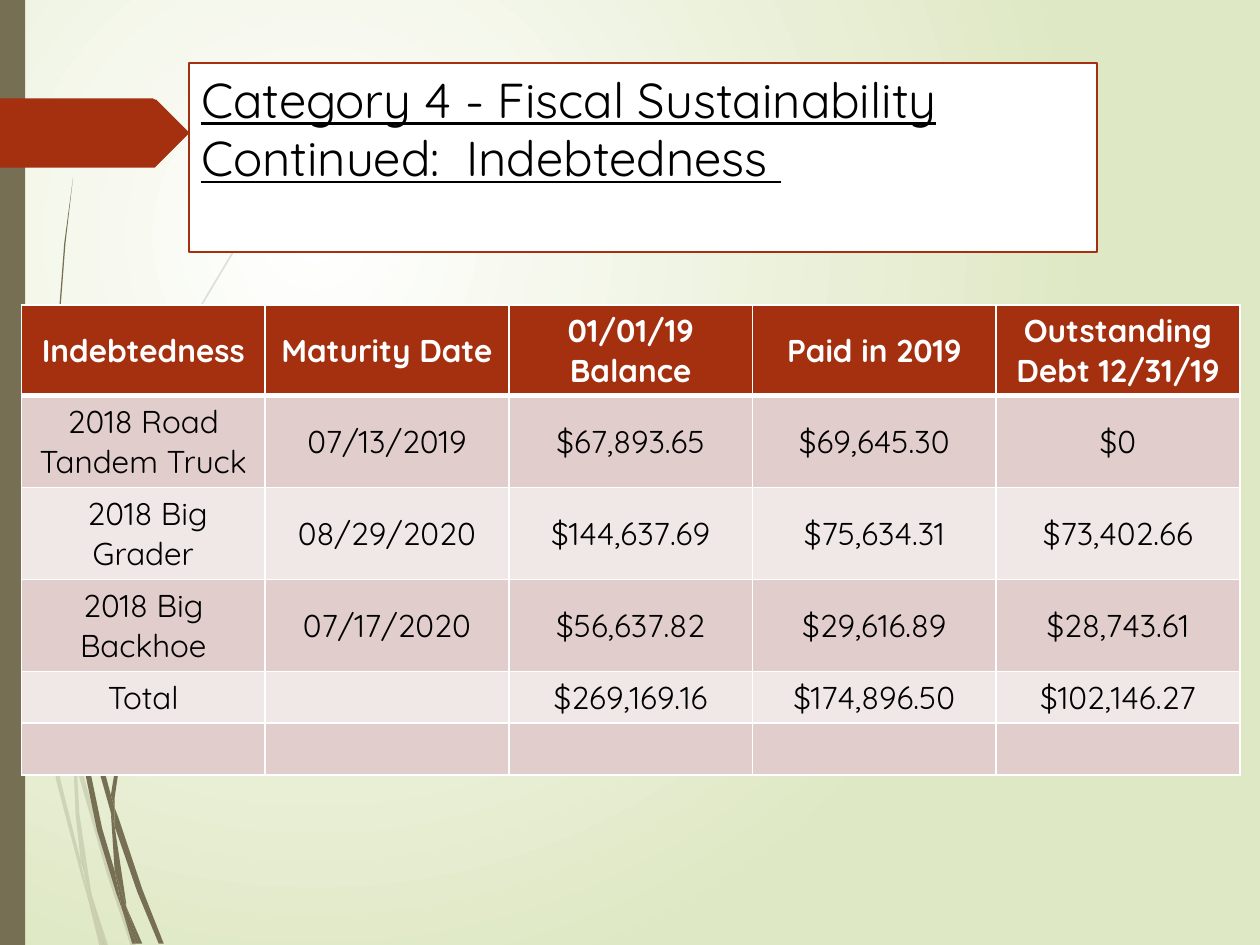
from dataclasses import dataclass

from lxml import etree
from pptx import Presentation
from pptx.dml.color import RGBColor
from pptx.enum.shapes import MSO_SHAPE
from pptx.enum.text import MSO_ANCHOR, PP_ALIGN
from pptx.oxml.ns import qn
from pptx.util import Pt

RECT = MSO_SHAPE.RECTANGLE
TOP, MIDDLE = MSO_ANCHOR.TOP, MSO_ANCHOR.MIDDLE
CENTER = PP_ALIGN.CENTER
PX = 9144  # EMU in one px, 100 px to the inch


@dataclass(frozen=True)
class Theme:
    font: str = "Quicksand"
    title_size: int = 28
    table_size: int = 18
    ink: str = "000000"
    white: str = "FFFFFF"
    accent: str = "A53010"
    stem: str = "766F54"
    meadow: str = "DFE8C4"
    band_dark: str = "E1CDCC"
    band_light: str = "F0E8E7"


T = Theme()

TITLE = "Category 4 - Fiscal Sustainability Continued:  Indebtedness "
ROWS = [
    ["Indebtedness", "Maturity Date", "01/01/19 Balance", "Paid in 2019", "Outstanding Debt 12/31/19"],
    ["2018 Road Tandem Truck", "07/13/2019", "$67,893.65", "$69,645.30", "$0"],
    [" 2018 Big Grader", "08/29/2020", "$144,637.69", "$75,634.31", "$73,402.66"],
    ["2018 Big Backhoe", "07/17/2020", "$56,637.82", "$29,616.89", "$28,743.61"],
    ["Total", "", "$269,169.16", "$174,896.50", "$102,146.27"],
    ["", "", "", "", ""],
]
ROW_HEIGHTS = [72, 73, 73, 73, 41, 41]

# Outlines of the grass blades, in px
PALE_BLADES = [
    [(8, 350), (6, 322), (0, 282), (0, 299), (7, 344)],
    [(40, 522), (59, 599), (59, 586), (43, 520), (10, 345), (12, 376)],
    [(64, 607), (61, 596), (61, 610), (85, 694), (104, 751), (108, 751), (88, 692)],
    [(83, 751), (86, 751), (73, 711)],
    [(64, 683), (48, 619), (22, 469), (12, 376), (8, 350), (19, 470), (45, 621),
     (64, 693), (70, 714), (69, 707)],
    [(58, 599), (60, 646), (64, 683), (67, 692), (73, 711), (72, 706), (63, 646),
     (61, 610), (61, 608)],
    [(61, 584), (76, 462), (111, 349), (159, 245), (187, 198), (201, 175), (217, 154),
     (217, 153), (201, 175), (186, 197), (158, 244), (110, 348), (75, 461), (59, 584),
     (59, 586), (61, 596)],
    [(70, 714), (79, 751), (82, 751)],
    [(61, 608), (61, 610), (61, 596), (59, 586), (58, 599)],
    [(67, 692), (65, 683), (69, 707), (70, 714), (82, 751), (83, 751), (73, 711)],
]
DARK_BLADES = [
    [(5, 110), (14, 233), (27, 355), (46, 477), (47, 481), (45, 457), (45, 453),
     (30, 355), (15, 232), (6, 109), (4, 48), (3, 0), (2, 0), (3, 48)],
    [(73, 592), (88, 645), (88, 633), (88, 631), (77, 590), (50, 472), (53, 505)],
    [(94, 649), (91, 641), (91, 656), (109, 708), (126, 749), (130, 749), (113, 706)],
    [(91, 691), (81, 657), (60, 556), (53, 505), (47, 477), (56, 557), (77, 659),
     (92, 708), (97, 722), (96, 717)],
    [(50, 472), (48, 453), (44, 349), (48, 245), (52, 193), (58, 141), (58, 141),
     (51, 193), (47, 245), (43, 349), (45, 449), (49, 472)],
    [(110, 749), (113, 749), (100, 719)],
    [(47, 477), (53, 505), (50, 472), (49, 472), (45, 449), (45, 453)],
    [(91, 633), (103, 552), (131, 476), (169, 406), (191, 374), (203, 359), (216, 344),
     (215, 344), (203, 358), (191, 373), (168, 405), (129, 474), (101, 551), (88, 631),
     (91, 641)],
    [(97, 722), (105, 749), (108, 749)],
    [(88, 645), (91, 691), (96, 706), (100, 719), (100, 716), (91, 656), (90, 651)],
    [(88, 645), (90, 651), (91, 656), (91, 641), (88, 631), (88, 633)],
    [(96, 706), (91, 691), (96, 717), (97, 722), (108, 749), (110, 749), (100, 719)],
]
ARROW_TAB = [(149, 107), (124, 132), (123, 133), (121, 133), (0, 133), (0, 78),
             (121, 78), (123, 79), (124, 79), (149, 104), (150, 105)]


def px(*lengths):
    return [n * PX for n in lengths]


def rgb(color):
    return RGBColor.from_string(color)


def paint(sp, color, alpha=None):
    """Flat fill with no outline and no shadow."""
    sp.shadow.inherit = False
    sp.line.fill.background()
    sp.fill.solid()
    sp.fill.fore_color.rgb = rgb(color)
    if alpha:
        clr = sp._element.spPr.find(qn("a:solidFill"))[0]
        etree.SubElement(clr, qn("a:alpha"), val=str(alpha * 1000))


def add_outline(s, points, color, alpha=None):
    builder = s.shapes.build_freeform(*points[0], scale=PX)
    builder.add_line_segments(points[1:], close=True)
    paint(builder.convert_to_shape(), color, alpha)


def add_run(p, text, size, color, bold=False, underline=False):
    r = p.add_run()
    r.text = text
    f = r.font
    f.name, f.size, f.bold, f.underline = T.font, Pt(size), bold, underline
    f.color.rgb = rgb(color)


def set_background(s):
    """Round glow a quarter of the way in from the top left."""
    fill = s.background.fill
    fill.gradient()
    for stop, color in zip(fill.gradient_stops, (T.white, T.meadow)):
        stop.color.rgb = rgb(color)
    grad = s._element.find(".//" + qn("a:gradFill"))
    grad.remove(grad.find(qn("a:lin")))
    glow = etree.SubElement(grad, qn("a:path"), path="circle")
    etree.SubElement(glow, qn("a:fillToRect"), l="50000", t="50000", r="100000", b="100000")


def add_title(s):
    sp = s.shapes.add_textbox(*px(150, 50, 721, 150))
    sp.fill.solid()
    sp.fill.fore_color.rgb = rgb(T.white)
    sp.line.color.rgb = rgb(T.accent)
    sp.line.width = Pt(1.25)
    tf = sp.text_frame
    tf.word_wrap = True
    tf.vertical_anchor = TOP
    add_run(tf.paragraphs[0], TITLE, T.title_size, T.ink, underline=True)


def set_border(cell, side, width):
    ln = etree.SubElement(cell._tc.get_or_add_tcPr(), qn("a:ln" + side), w=str(Pt(width)))
    fill = etree.SubElement(ln, qn("a:solidFill"))
    etree.SubElement(fill, qn("a:srgbClr"), val=T.white)


def fill_cell(cell, text, row):
    heading = row == 0
    thick_side = {0: "B", 1: "T"}.get(row)  # heavy rule under the heading
    for side in "LRTB":
        set_border(cell, side, 3 if side == thick_side else 1)
    cell.fill.solid()
    band = T.band_dark if row % 2 else T.band_light
    cell.fill.fore_color.rgb = rgb(T.accent if heading else band)
    cell.vertical_anchor = MIDDLE
    p = cell.text_frame.paragraphs[0]
    p.alignment = CENTER
    if text:
        add_run(p, text, T.table_size, T.white if heading else T.ink, bold=heading)


def add_debt_table(s):
    columns = len(ROWS[0])
    frame = s.shapes.add_table(len(ROWS), columns, *px(17, 242, 967, sum(ROW_HEIGHTS)))
    table = frame.table
    for i, (values, height) in enumerate(zip(ROWS, ROW_HEIGHTS)):
        table.rows[i].height = height * PX
        for j, text in enumerate(values):
            fill_cell(table.cell(i, j), text, i)


def main():
    prs = Presentation()
    prs.slide_width, prs.slide_height = px(1000, 750)
    s = prs.slides.add_slide(prs.slide_layouts[6])

    # Backdrop: glow, grass, side bar and arrow tab
    set_background(s)
    for blade in PALE_BLADES:
        add_outline(s, blade, T.stem, alpha=20)
    for blade in DARK_BLADES:
        add_outline(s, blade, T.stem)
    paint(s.shapes.add_shape(RECT, *px(0, 0, 20, 750)), T.stem)
    add_outline(s, ARROW_TAB, T.accent)

    # Content
    add_title(s)
    add_debt_table(s)
    prs.save("out.pptx")


if __name__ == "__main__":
    main()
